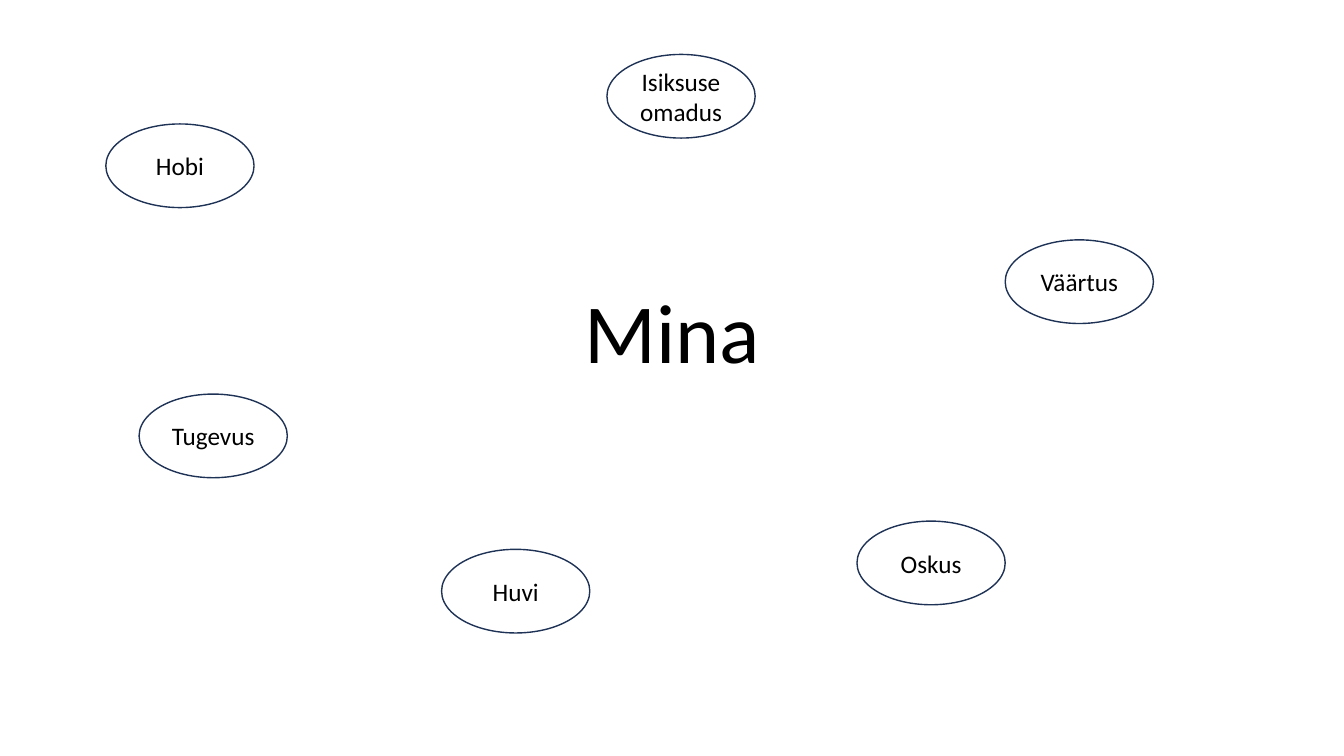
from pptx import Presentation
from pptx.dml.color import RGBColor
from pptx.enum import shapes, text
from pptx.util import Inches, Pt

TOPICS = [
    ("Hobi", 1.05, 1.23),
    ("Tugevus", 1.38, 3.91),
    ("Isiksuse\vomadus", 6.02, 0.54),
    ("Väärtus", 9.97, 2.38),
    ("Oskus", 8.5, 5.17),
    ("Huvi", 4.38, 5.45),
]


def color(code):
    return RGBColor.from_string(code)


def write(shape, words, size, anchor, spacing=1.0):
    frame = shape.text_frame
    frame.word_wrap = True
    frame.vertical_anchor = anchor
    para = frame.paragraphs[0]
    para.text = words
    para.alignment = text.PP_ALIGN.CENTER
    para.line_spacing = spacing
    for run in para.runs:
        for name, value in {"name": "Calibri", "size": Pt(size)}.items():
            setattr(run.font, name, value)
        run.font.color.rgb = color("000000")


def title(slide, words):
    box = slide.shapes.add_textbox(Inches(1.67), Inches(1.23), Inches(10), Inches(2.61))
    write(box, words, 60, text.MSO_ANCHOR.BOTTOM, 0.9)


def bubble(slide, words, left, top):
    oval = slide.shapes.add_shape(
        shapes.MSO_SHAPE.OVAL, Inches(left), Inches(top), Inches(1.47), Inches(0.83)
    )
    oval.shadow.inherit = False
    oval.fill.background()
    oval.line.color.rgb = color("1E3256")
    oval.line.width = Pt(1)
    frame = oval.text_frame
    for side in ("left", "right", "top", "bottom"):
        setattr(frame, f"margin_{side}", Inches(0))
    write(oval, words, 18, text.MSO_ANCHOR.MIDDLE)


def main():
    deck = Presentation()
    deck.slide_width = Inches(13.33)
    deck.slide_height = Inches(7.5)
    slide = deck.slides.add_slide(deck.slide_layouts[6])
    title(slide, "Mina")
    for topic in TOPICS:
        bubble(slide, *topic)
    deck.save("out.pptx")


if __name__ == "__main__":
    main()
